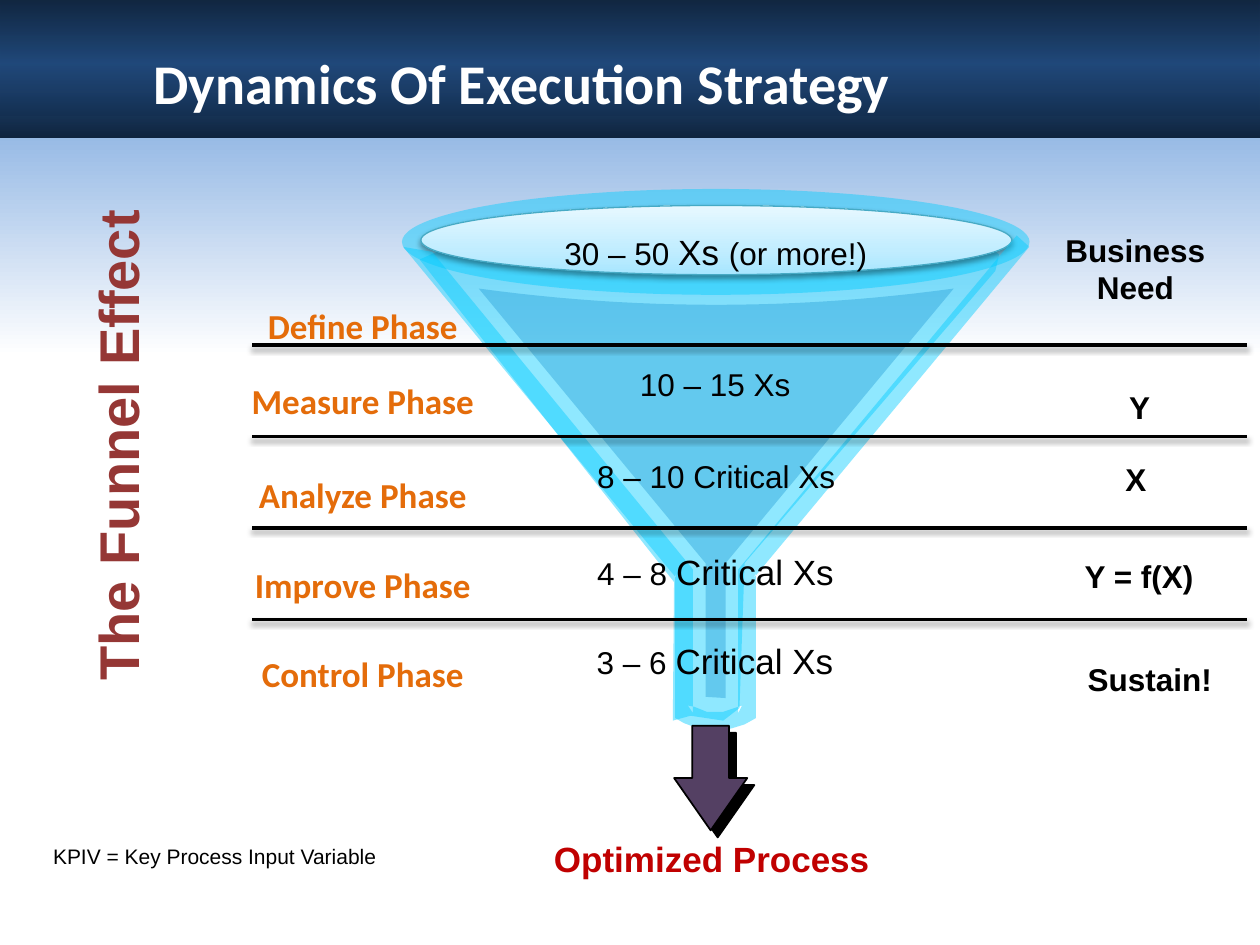
from lxml import etree
from pptx import Presentation
from pptx.dml.color import RGBColor
from pptx.enum.shapes import MSO_CONNECTOR, MSO_SHAPE
from pptx.enum.text import MSO_ANCHOR, PP_ALIGN
from pptx.oxml.ns import qn
from pptx.util import Pt

RECT, OVAL, DOWN = MSO_SHAPE.RECTANGLE, MSO_SHAPE.OVAL, MSO_SHAPE.DOWN_ARROW
LINE = MSO_CONNECTOR.STRAIGHT
LEFT, MID = PP_ALIGN.LEFT, PP_ALIGN.CENTER
TOP, LOW = MSO_ANCHOR.TOP, MSO_ANCHOR.BOTTOM

BLACK = RGBColor(0x00, 0x00, 0x00)
WHITE = RGBColor(0xFF, 0xFF, 0xFF)
NAVY = RGBColor(0x0F, 0x24, 0x3E)
BLUE = RGBColor(0x1F, 0x49, 0x7D)
SKY = RGBColor(0x8E, 0xB4, 0xE3)
STEEL = RGBColor(0x4F, 0x81, 0xBD)
CYAN = RGBColor(0x00, 0xCC, 0xFF)
TEAL = RGBColor(0x46, 0xAA, 0xC5)
ICE = RGBColor(0xA7, 0xE6, 0xFF)
FROST = RGBColor(0xC1, 0xED, 0xFF)
PALE = RGBColor(0xE7, 0xF8, 0xFF)
PLUM = RGBColor(0x54, 0x40, 0x63)
ORANGE = RGBColor(0xE4, 0x6C, 0x0A)
RED = RGBColor(0xC0, 0x00, 0x00)
BRICK = RGBColor(0x95, 0x37, 0x35)

DARK = [(0, NAVY, 90), (46, BLUE, 90), (100, NAVY, 100)]
LIGHT = [(0, SKY, 100), (29, WHITE, 100), (100, WHITE, 100)]
GLOSS = [(0, ICE, 100), (35, FROST, 100), (100, PALE, 100)]
SOFT = (38, 3.1, 1.6, 90)
HARD = (100, 0, 5.7, 45)

BANDS = [(0, 251, DARK), (66.2, 473.8, LIGHT), (0, 78.5, DARK)]

PHASES = [("Define Phase", 2), ("Measure Phase", 1.65), ("Analyze Phase", 2.1),
          ("Improve Phase", 2), ("Control Phase", 2)]

COUNTS = [
    ((283.7, 128.2, 250.6, 31), [("30 – 50 ", 18), ("Xs ", 20), ("(or more!)", 18)], 1),
    ((333.4, 205.2, 150.5, 28.8), [("10 – 15 Xs", 18)], 1),
    ((320.4, 257.8, 177.8, 28.8), [("8 – 10 Critical Xs", 18)], 1),
    ((332.6, 311, 152.6, 31), [("4 – 8 ", 18), ("Critical Xs", 20)], 1),
    ((320.4, 365.8, 176.4, 27.4), [("3 – 6 ", 18), ("Critical Xs", 20)], 0.85),
]

GOALS = [("Business Need", (589, 128.2, 119.5, 50.4)), ("Y", (630, 218.2, 42.5, 28.8)),
         ("X", (628.6, 259.2, 41, 28.8)), ("Y = f(X)", (610.6, 314.6, 80.6, 28.8)),
         ("Sustain!", (610.6, 373.7, 92.9, 28.8))]

ARC = [(409.3 + 135.7 * i / 12, 174.2 - 9.3 * (i / 12) ** 2) for i in range(-12, 13)]
BODY = ARC + [(414.7, 321.8), (414.7, 398.9), (403.2, 398.2), (403.2, 321.8)]
GLASS = [(265.7, 136.8), (239.8, 148.3), (385.2, 332.6), (384.5, 411.8),
         (394.6, 409), (413.3, 411.8), (422.6, 404.6), (425.5, 321.8),
         (568.8, 154.8), (571, 145.4), (550, 129.6)]
WALL = [(230.4, 141.1), (386.6, 330.5), (385.9, 327.6), (385.9, 410.4),
        (391, 413.3), (398.9, 416.2), (411.1, 417.6), (418.3, 416.2),
        (425.5, 414), (432, 410.4), (432, 327.6), (430.6, 330.5),
        (588.2, 141.1), (581, 134.6), (421.9, 325.4), (421.9, 407.5),
        (424.1, 403.2), (413.3, 406.8), (403.9, 406.8), (396.7, 403.9),
        (393.1, 403.2), (396, 407.5), (396, 325.4), (247, 144)]

deck = Presentation()
deck.slide_width, deck.slide_height = Pt(720), Pt(540)
shapes = deck.slides.add_slide(deck.slide_layouts[6]).shapes


def tint(node, color, alpha):
    clr = etree.SubElement(node, qn("a:srgbClr"), val=str(color))
    if alpha < 100:
        etree.SubElement(clr, qn("a:alpha"), val=str(alpha * 1000))


def shade(shape, alpha, blur, dist, angle):
    fx = etree.SubElement(shape._element.spPr, qn("a:effectLst"))
    node = etree.SubElement(fx, qn("a:outerShdw"), blurRad=str(Pt(blur)),
                            dist=str(Pt(dist)), dir=str(angle * 60000),
                            rotWithShape="0")
    tint(node, BLACK, alpha)


def blend(shape, stops, angle):
    shape.fill.gradient()
    shape.fill.gradient_angle = angle
    group = shape._element.spPr.find(".//" + qn("a:gsLst"))
    for old in list(group):
        group.remove(old)
    for pos, color, alpha in stops:
        tint(etree.SubElement(group, qn("a:gs"), pos=str(pos * 1000)), color, alpha)


def clear(shape, color):
    shape.shadow.inherit = False
    shape.line.fill.background()
    shape.fill.solid()
    shape.fill.fore_color.rgb = color
    clr = shape._element.spPr.find(".//" + qn("a:srgbClr"))
    etree.SubElement(clr, qn("a:alpha"), val="44000")


def preset(kind, box):
    return shapes.add_shape(kind, *map(Pt, box))


def outline(points, color):
    ends = [(Pt(x), Pt(y)) for x, y in points]
    pen = shapes.build_freeform(*ends[0], scale=1.0)
    pen.add_line_segments(ends[1:], close=True)
    clear(pen.convert_to_shape(), color)


def write(para, text, size, color, bold, font):
    run = para.add_run()
    run.text = text
    run.font.size, run.font.name, run.font.bold = Pt(size), font, bold
    run.font.color.rgb = color


def frame(box, pad=(7.2, 3.6), anchor=TOP, wrap=True):
    shape = shapes.add_textbox(*map(Pt, box))
    text = shape.text_frame
    text.word_wrap, text.vertical_anchor = wrap, anchor
    text.margin_left = text.margin_right = Pt(pad[0])
    text.margin_top = text.margin_bottom = Pt(pad[1])
    return shape


def label(box, runs, color=BLACK, bold=False, font="Arial", align=MID, space=1, **opts):
    shape = frame(box, **opts)
    para = shape.text_frame.paragraphs[0]
    para.alignment, para.line_spacing = align, space
    for text, size in runs:
        write(para, text, size, color, bold, font)
    return shape


for top, high, stops in BANDS:
    band = preset(RECT, (0, top, 720, high))
    band.shadow.inherit = False
    band.line.fill.background()
    blend(band, stops, 270)

label((80.6, 23.8, 453.6, 46), [("Dynamics Of Execution Strategy", 32)],
      WHITE, True, "Calibri", LEFT, anchor=LOW)

text = frame((66.2, 149.8, 282.2, 243.4), pad=(0, 0)).text_frame
for i, (name, space) in enumerate(PHASES):
    para = text.add_paragraph() if i else text.paragraphs[0]
    para.alignment, para.line_spacing = MID, space
    para.space_before = Pt(3.3)
    write(para, name, 20, ORANGE, True, "Calibri")

outline(BODY, STEEL)
outline(GLASS, CYAN)
clear(preset(OVAL, (229.7, 108, 358.6, 60.5)), CYAN)
mouth = preset(OVAL, (240.5, 117.4, 337.7, 39.6))
blend(mouth, GLOSS, 90)
mouth.line.color.rgb, mouth.line.width = TEAL, Pt(0.75)
shade(mouth, *SOFT)
outline(WALL, CYAN)

label((249.8, 475.2, 313.9, 31), [("Optimized Process", 20)], RED, True)

arrow = preset(DOWN, (385.2, 414.7, 41.8, 59.8))
arrow.adjustments[0], arrow.adjustments[1] = 0.5, 0.715
arrow.fill.solid()
arrow.fill.fore_color.rgb = PLUM
arrow.line.color.rgb, arrow.line.width = BLACK, Pt(1)
shade(arrow, *HARD)

for i in range(len(PHASES) - 1):
    y = Pt(197.3 + 52.2 * i)
    rule = shapes.add_connector(LINE, Pt(712.5), y, Pt(144), y)
    rule.line.color.rgb, rule.line.width = BLACK, Pt(2)
    shade(rule, *SOFT)

for box, runs, space in COUNTS:
    label(box, runs, space=space)

label((20.9, 484.6, 210.2, 11.5), [("KPIV = Key Process Input Variable", 12)],
      align=LEFT, space=0.8, pad=(9.4, 0))

for name, box in GOALS:
    label(box, [(name, 18)], bold=True, pad=(3.6, 3.6))

side = label((-75.6, 230.4, 285.1, 46), [("The Funnel Effect", 32)],
             BRICK, True, align=LEFT, wrap=False)
side.rotation = 270

deck.save("out.pptx")
